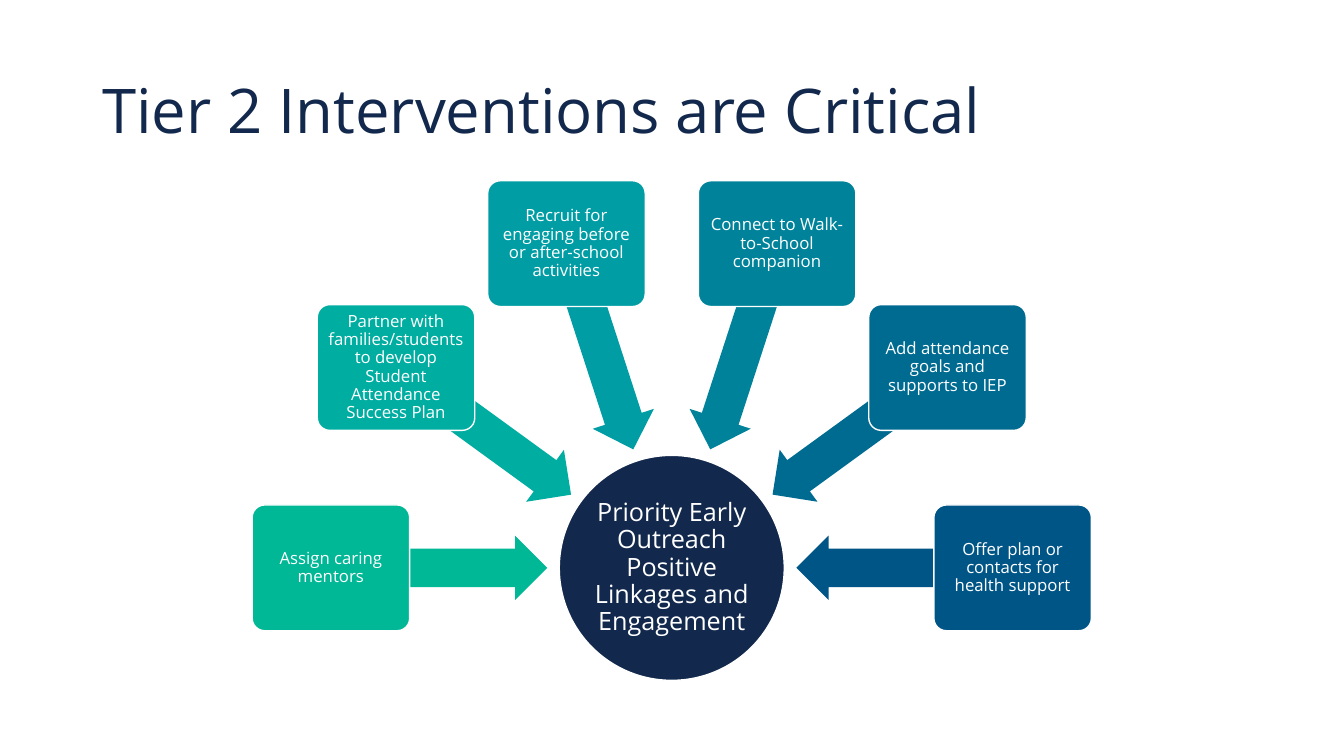
from math import cos, radians, sin

from pptx import Presentation
from pptx.dml.color import RGBColor
from pptx.enum.shapes import MSO_SHAPE as Shape
from pptx.enum.text import MSO_ANCHOR as Anchor, PP_ALIGN as Align
from pptx.util import Cm, Pt

COLORS = {
    "navy": "12284C", "white": "FFFFFF",
    "green": "00B796", "jade": "00ADA1", "teal": "009DA4",
    "lagoon": "00839A", "ocean": "006B91", "blue": "005587",
}
INTERVENTIONS = [
    ("Assign caring mentors", "green"),
    ("Partner with families/students to develop Student Attendance Success Plan", "jade"),
    ("Recruit for engaging before or after-school activities", "teal"),
    ("Connect to Walk-to-School companion", "lagoon"),
    ("Add attendance goals and supports to IEP", "ocean"),
    ("Offer plan or contacts for health support", "blue"),
]
HUB_X, HUB_Y, HUB_SIZE = 16.93, 14.31, 5.67
CARD_RADIUS, CARD_W, CARD_H = 8.59, 3.97, 3.17
ARROW_RADIUS, ARROW_W, ARROW_H = 5.86, 5.44, 1.62


def add_centered(kind, x, y, width, height, color):
    shape = slide.shapes.add_shape(
        kind, Cm(x - width / 2), Cm(y - height / 2), Cm(width), Cm(height))
    shape.shadow.inherit = False
    shape.fill.solid()
    shape.fill.fore_color.rgb = RGBColor.from_string(COLORS[color])
    shape.line.fill.background()
    return shape


def write(shape, text, size, color, align, inset_x, inset_y):
    frame = shape.text_frame
    frame_format = {
        "word_wrap": True, "vertical_anchor": Anchor.MIDDLE,
        "margin_left": Cm(inset_x), "margin_right": Cm(inset_x),
        "margin_top": Cm(inset_y), "margin_bottom": Cm(inset_y),
    }
    for attribute, value in frame_format.items():
        setattr(frame, attribute, value)
    paragraph = frame.paragraphs[0]
    paragraph.alignment = align
    paragraph.line_spacing = 0.9
    run = paragraph.add_run()
    run.text = text
    for attribute, value in {"name": "Open Sans", "size": Pt(size)}.items():
        setattr(run.font, attribute, value)
    run.font.color.rgb = RGBColor.from_string(COLORS[color])


deck = Presentation()
deck.slide_width, deck.slide_height = Cm(33.87), Cm(19.05)
slide = deck.slides.add_slide(deck.slide_layouts[6])

title = slide.shapes.add_textbox(Cm(2.33), Cm(1.01), Cm(29.21), Cm(3.68))
write(title, "Tier 2 Interventions are Critical", 44, "navy", Align.LEFT, 0.25, 0.13)

hub = add_centered(Shape.OVAL, HUB_X, HUB_Y, HUB_SIZE, HUB_SIZE, "navy")
write(hub, "Priority Early Outreach Positive Linkages and Engagement",
      18, "white", Align.CENTER, 0.03, 0.03)
outlined = [hub]

for index, (intervention, color) in enumerate(INTERVENTIONS):
    angle = 180 + 36 * index
    across, down = cos(radians(angle)), sin(radians(angle))

    arrow = add_centered(Shape.LEFT_ARROW, HUB_X + ARROW_RADIUS * across,
                         HUB_Y + ARROW_RADIUS * down, ARROW_W, ARROW_H, color)
    arrow.rotation = angle % 360
    arrow.adjustments[0] = 0.6
    arrow.adjustments[1] = 0.5

    card = add_centered(Shape.ROUNDED_RECTANGLE, HUB_X + CARD_RADIUS * across,
                        HUB_Y + CARD_RADIUS * down, CARD_W, CARD_H, color)
    card.adjustments[0] = 0.1
    write(card, intervention, 12, "white", Align.CENTER, 0.08, 0.08)
    outlined.append(card)

for shape in outlined:
    shape.line.color.rgb = RGBColor.from_string(COLORS["white"])
    shape.line.width = Pt(1)

deck.save("out.pptx")
